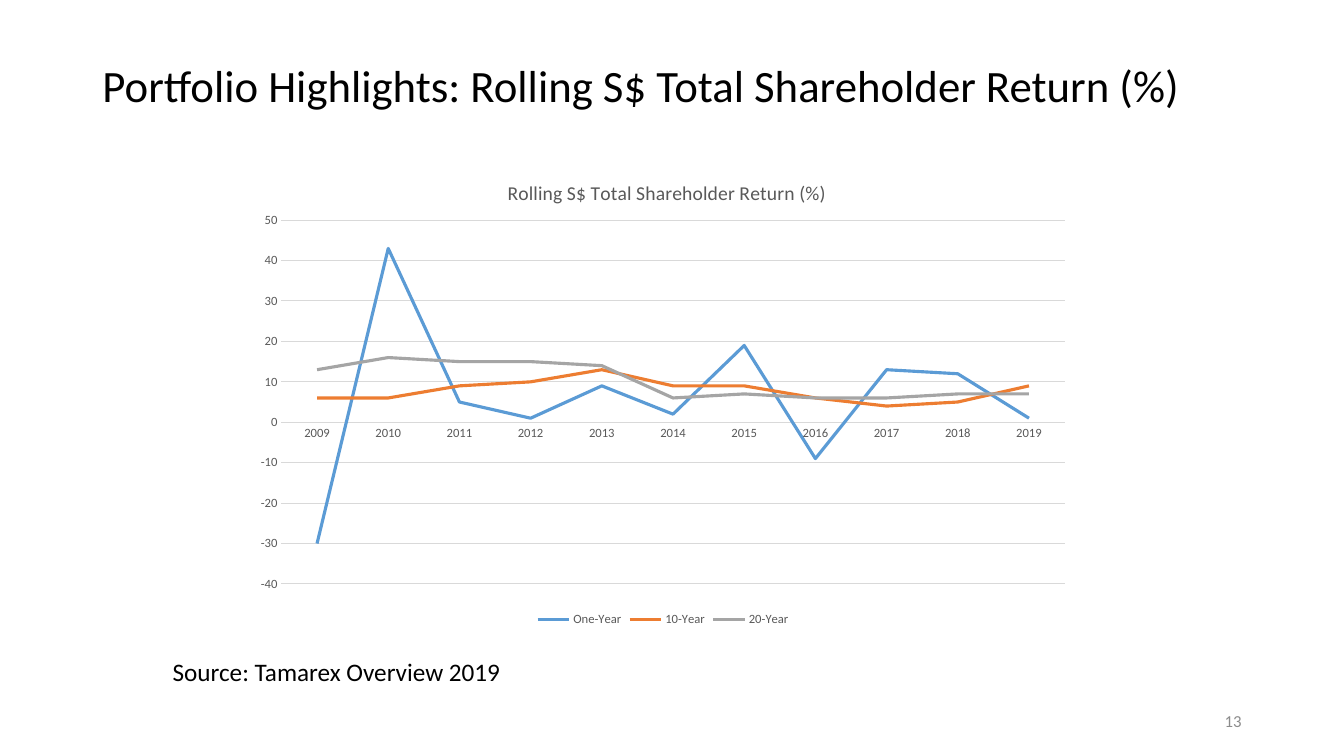
from lxml.etree import SubElement
from pptx import Presentation
from pptx.chart.data import CategoryChartData
from pptx.dml.color import RGBColor
from pptx.enum.chart import XL_CHART_TYPE, XL_LEGEND_POSITION, XL_MARKER_STYLE, XL_TICK_MARK
from pptx.enum.text import MSO_ANCHOR, PP_ALIGN
from pptx.oxml.ns import qn
from pptx.util import Pt

PX = 9525
FONT = "Calibri"
COLORS = {"text": "000000", "label": "595959", "grid": "D9D9D9", "number": "8C8C8C"}
YEARS = [str(year) for year in range(2009, 2020)]
RETURNS = [
    ("One-Year", "5B9BD5", (-30, 43, 5, 1, 9, 2, 19, -9, 13, 12, 1)),
    ("10-Year", "ED7D31", (6, 6, 9, 10, 13, 9, 9, 6, 4, 5, 9)),
    ("20-Year", "A5A5A5", (13, 16, 15, 15, 14, 6, 7, 6, 6, 7, 7)),
]


def emu(box):
    return [length * PX for length in box]


def style_font(font, size, color):
    font.name = FONT
    font.size = Pt(size)
    font.bold = False
    font.color.rgb = RGBColor.from_string(color)


def style_line(line, color, width):
    line.color.rgb = RGBColor.from_string(color)
    line.width = Pt(width)


def set_layout(parent, after, **fractions):
    """Place a chart part by fractions of the chart area."""
    for old in parent.findall(qn("c:layout")):
        parent.remove(old)
    layout = SubElement(parent, qn("c:layout"))
    manual = SubElement(layout, qn("c:manualLayout"))
    if "w" in fractions:
        SubElement(manual, qn("c:layoutTarget")).set("val", "inner")
    for side in ("x", "y"):
        SubElement(manual, qn(f"c:{side}Mode")).set("val", "edge")
    for name, value in fractions.items():
        SubElement(manual, qn(f"c:{name}")).set("val", str(value))
    if after is None:
        parent.insert(0, layout)
    else:
        after.addnext(layout)


def add_title(page, box, text):
    title = page.shapes.title
    title.left, title.top, title.width, title.height = emu(box)
    frame = title.text_frame
    frame.text = text
    frame.vertical_anchor = MSO_ANCHOR.MIDDLE
    frame.margin_bottom = 52 * PX  # lifts the line above the middle
    para = frame.paragraphs[0]
    para.alignment = PP_ALIGN.LEFT
    para.line_spacing = 0.9
    style_font(para.font, 32, COLORS["text"])


def add_label(page, box, text, size, color, align=PP_ALIGN.LEFT, anchor=MSO_ANCHOR.TOP):
    frame = page.shapes.add_textbox(*emu(box)).text_frame
    frame.word_wrap = True
    frame.vertical_anchor = anchor
    para = frame.paragraphs[0]
    para.text = text
    para.alignment = align
    style_font(para.font, size, color)


def add_return_chart(page, box, heading):
    data = CategoryChartData()
    data.categories = YEARS
    for name, _, values in RETURNS:
        data.add_series(name, values)
    chart = page.shapes.add_chart(XL_CHART_TYPE.LINE, *emu(box), data).chart
    style_font(chart.font, 10, COLORS["text"])

    # Heading and plot area
    chart.has_title = True
    chart.chart_title.include_in_layout = False
    para = chart.chart_title.text_frame.paragraphs[0]
    para.text = heading
    style_font(para.font, 14, COLORS["label"])
    title = chart.chart_title._element
    set_layout(title, title.find(qn("c:tx")), x=0.31, y=0.05)
    plot_area = chart._chartSpace.find(".//" + qn("c:plotArea"))
    set_layout(plot_area, None, x=0.044, y=0.142, w=0.936, h=0.76)

    # Lines
    for series, (_, color, _) in zip(chart.plots[0].series, RETURNS):
        series.smooth = False
        series.marker.style = XL_MARKER_STYLE.NONE
        style_line(series.format.line, color, 2.25)
    chart.plots[0].vary_by_categories = False

    # Axes
    years, percent = chart.category_axis, chart.value_axis
    for axis in (years, percent):
        axis.major_tick_mark = axis.minor_tick_mark = XL_TICK_MARK.NONE
        style_font(axis.tick_labels.font, 9, COLORS["label"])
    style_line(years.format.line, COLORS["grid"], 0.75)
    percent.format.line.fill.background()
    percent.minimum_scale, percent.maximum_scale, percent.major_unit = -40, 50, 10
    style_line(percent.major_gridlines.format.line, COLORS["grid"], 0.75)

    # Legend
    chart.has_legend = True
    chart.legend.position = XL_LEGEND_POSITION.BOTTOM
    chart.legend.include_in_layout = False
    style_font(chart.legend.font, 9, COLORS["label"])


def main():
    deck = Presentation()
    deck.slide_width, deck.slide_height = 1280 * PX, 720 * PX
    page = deck.slides.add_slide(deck.slide_layouts[5])
    heading = "Rolling S$ Total Shareholder Return (%)"
    add_title(page, (88, 38, 1104, 139), f"Portfolio Highlights: {heading}")
    add_label(page, (904, 667, 288, 38), "13", 12, COLORS["number"],
              PP_ALIGN.RIGHT, MSO_ANCHOR.MIDDLE)
    add_return_chart(page, (233, 145, 797, 456), heading)
    add_label(page, (155, 620, 337, 38), "Source: Tamarex Overview 2019", 18, COLORS["text"])
    deck.save("out.pptx")


if __name__ == "__main__":
    main()
